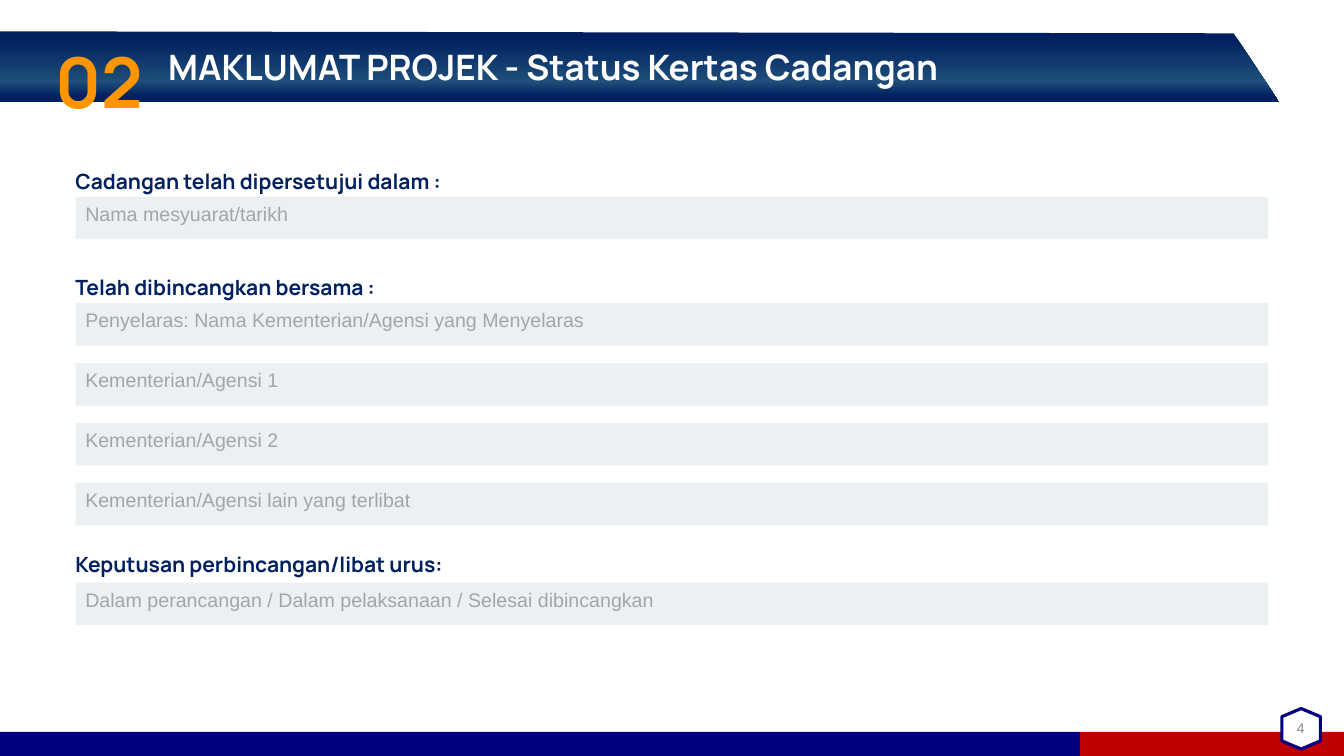
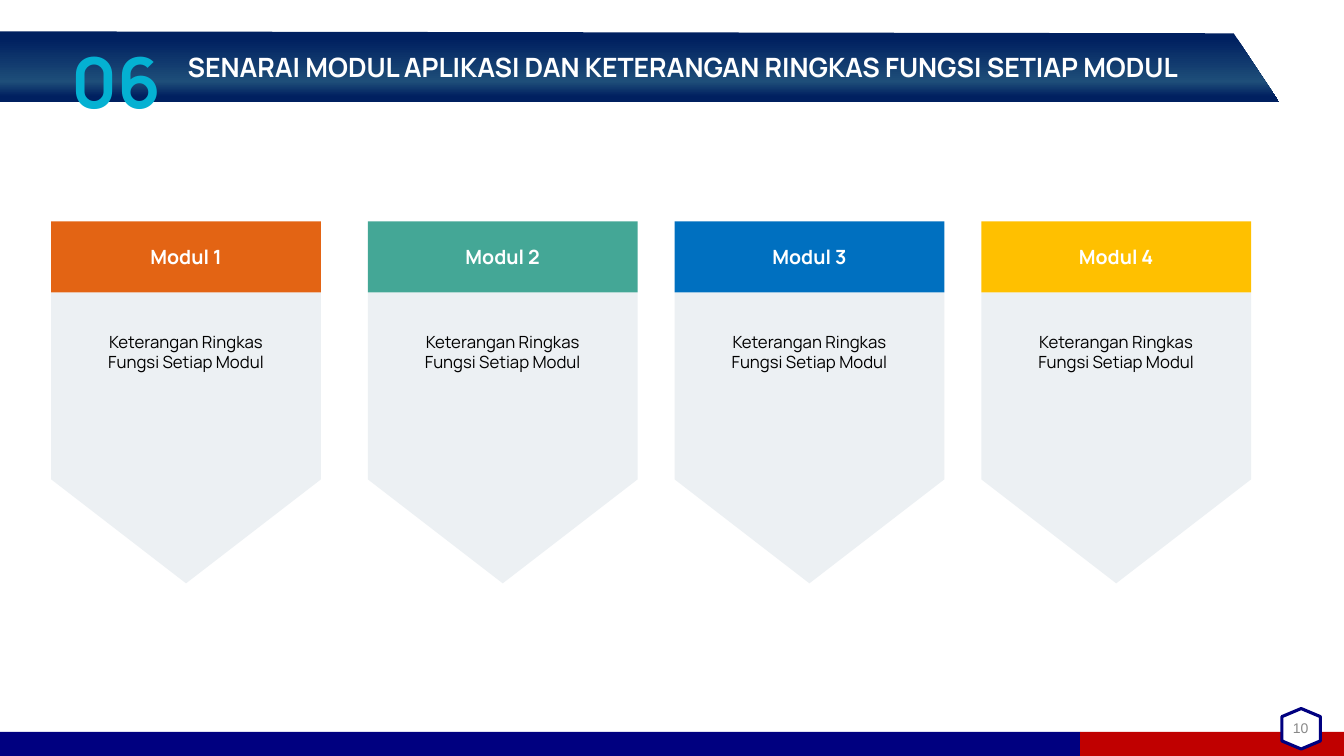
from dataclasses import dataclass
from lxml.etree import SubElement
from pptx import Presentation
from pptx.dml.color import RGBColor
from pptx.enum.shapes import MSO_SHAPE
from pptx.enum.text import MSO_ANCHOR, PP_ALIGN
from pptx.oxml.ns import qn
from pptx.util import Cm, Pt

SLIDE_WIDTH, SLIDE_HEIGHT = 33.87, 19.05
NAVY, BAND_NAVY, BAND_BLUE, RED = "000080", "002060", "1E4E79", "C00000"
WHITE, BLACK, PANEL, PROMPT, PAGE_GREY = "FFFFFF", "000000", "ECF0F3", "A5A5A5", "888888"
BAND_STOPS = [(0, BAND_NAVY), (10, BAND_NAVY), (71, BAND_BLUE), (92, BAND_NAVY), (100, BAND_NAVY)]
HEADING_FONT, BODY_FONT = "Manrope", "Arial"
INSETS, NO_INSETS = (0.25, 0.13), (0, 0)


@dataclass
class Box:
    left: float
    top: float
    width: float
    height: float

    def lengths(self):
        return Cm(self.left), Cm(self.top), Cm(self.width), Cm(self.height)


def color(value):
    return RGBColor.from_string(value)


def write(shape, text, size, text_color, font=HEADING_FONT, bold=False, align=PP_ALIGN.LEFT,
          anchor=MSO_ANCHOR.TOP, insets=INSETS, indent=0, spacing=None):
    frame = shape.text_frame
    frame.word_wrap = True
    frame.vertical_anchor = anchor
    frame.margin_left, frame.margin_right = Cm(insets[0] + indent), Cm(insets[0])
    frame.margin_top = frame.margin_bottom = Cm(insets[1])
    paragraph = frame.paragraphs[0]
    paragraph.text = text
    paragraph.alignment = align
    if spacing:
        paragraph.line_spacing = spacing
    paragraph.font.name = font
    paragraph.font.size = Pt(size)
    paragraph.font.bold = bold
    paragraph.font.color.rgb = color(text_color)


def add_text(slide, box, text, size, text_color, **options):
    write(slide.shapes.add_textbox(*box.lengths()), text, size, text_color, **options)


def paint(shape, fill):
    shape.shadow.inherit = False
    shape.fill.solid()
    shape.fill.fore_color.rgb = color(fill)
    shape.line.fill.background()
    return shape


def add_rectangle(slide, box, fill):
    return paint(slide.shapes.add_shape(MSO_SHAPE.RECTANGLE, *box.lengths()), fill)


def add_outline(slide, points, fill):
    start, *rest = [(Cm(x), Cm(y)) for x, y in points]
    builder = slide.shapes.build_freeform(*start)
    builder.add_line_segments(rest, close=True)
    return paint(builder.convert_to_shape(), fill)


def apply_gradient(shape, stops):
    shape.fill.gradient()
    shape.fill.gradient_angle = 270
    stop_list = shape.element.spPr.find(qn("a:gradFill")).find(qn("a:gsLst"))
    for stop in list(stop_list):
        stop_list.remove(stop)
    for position, value in stops:
        stop = SubElement(stop_list, qn("a:gs"), pos=str(position * 1000))
        SubElement(stop, qn("a:srgbClr"), val=value)


def add_footer(slide, page):
    height, red_left = 0.61, 27.22
    top = SLIDE_HEIGHT - height
    add_rectangle(slide, Box(0, top, red_left, height), NAVY)
    add_rectangle(slide, Box(red_left, top, SLIDE_WIDTH - red_left, height), RED)
    badge = Box(32.28, 17.88, 1.02, 0.97)
    hexagon = paint(slide.shapes.add_shape(MSO_SHAPE.FLOWCHART_PREPARATION, *badge.lengths()), WHITE)
    hexagon.rotation = 90
    hexagon.line.color.rgb = color(NAVY)
    hexagon.line.width = Pt(2.25)
    add_text(slide, Box(badge.left - 0.05, badge.top - 0.05, 1.1, 1.02), page, 10, PAGE_GREY,
             font=BODY_FONT, align=PP_ALIGN.CENTER, anchor=MSO_ANCHOR.MIDDLE)


def add_header(slide, number, number_color, number_left, title, title_size, indent):
    band = add_outline(slide, [(0, 0.79), (31.09, 0.84), (32.23, 2.57), (0, 2.57)], BAND_NAVY)
    apply_gradient(band, BAND_STOPS)
    write(band, title, title_size, WHITE, bold=True, anchor=MSO_ANCHOR.MIDDLE, indent=indent)
    add_text(slide, Box(number_left, -0.1, 2.77, 3.23), number, 50, number_color, bold=True,
             align=PP_ALIGN.RIGHT, insets=NO_INSETS, spacing=1.51)


def add_framed_slide(presentation, page, **header):
    slide = presentation.slides.add_slide(presentation.slide_layouts[6])
    add_footer(slide, page)
    add_header(slide, **header)
    return slide


def add_section(slide, box, label, prompts, fields_offset):
    field_height, pitch = 1.07, 1.51
    add_text(slide, Box(box.left, box.top, 11.02, 0.64), label, 15, BAND_NAVY, bold=True,
             insets=NO_INSETS)
    for index, prompt in enumerate(prompts):
        top = box.top + fields_offset + index * pitch
        field = add_rectangle(slide, Box(box.left, top, box.width, field_height), PANEL)
        write(field, prompt, 14, PROMPT, font=BODY_FONT)


def add_module(slide, box, name, description, fill):
    header_height, point_height, text_width = 1.79, 2.62, 5.33
    right, bottom = box.left + box.width, box.top + box.height
    middle, body_top = box.left + box.width / 2, box.top + header_height
    shoulder = bottom - point_height
    add_outline(slide, [(box.left, body_top), (right, body_top), (right, shoulder),
                        (middle, bottom), (box.left, shoulder)], PANEL)
    header = add_rectangle(slide, Box(box.left, box.top, box.width, header_height), fill)
    write(header, name, 14, WHITE, bold=True, align=PP_ALIGN.CENTER, anchor=MSO_ANCHOR.MIDDLE)
    add_text(slide, Box(middle - text_width / 2, body_top + 0.86, text_width, 1.28),
             description, 12, BLACK, align=PP_ALIGN.CENTER)


def build_status_slide(presentation):
    slide = add_framed_slide(presentation, "4", number="02", number_color="FF9501", number_left=0.84,
                             title="MAKLUMAT PROJEK - Status Kertas Cadangan", title_size=25, indent=3.99)
    sections = [
        (4.24, 0.72, "Cadangan telah dipersetujui dalam :", ["Nama mesyuarat/tarikh"]),
        (6.92, 0.72, "Telah dibincangkan bersama :",
         ["Penyelaras: Nama Kementerian/Agensi yang Menyelaras", "Kementerian/Agensi 1",
          "Kementerian/Agensi 2", "Kementerian/Agensi lain yang terlibat"]),
        (13.89, 0.79, "Keputusan perbincangan/libat urus:",
         ["Dalam perancangan / Dalam pelaksanaan / Selesai dibincangkan"]),
    ]
    for top, fields_offset, label, prompts in sections:
        height = fields_offset + 1.51 * len(prompts)
        add_section(slide, Box(1.9, top, 30.06, height), label, prompts, fields_offset)


def build_modules_slide(presentation):
    slide = add_framed_slide(presentation, "10", number="06", number_color="04B1D2", number_left=1.28,
                             title="SENARAI MODUL APLIKASI DAN KETERANGAN RINGKAS FUNGSI SETIAP MODUL",
                             title_size=19, indent=4.48)
    modules = [(1.29, "E36414"), (9.27, "44A796"), (17, "0070C0"), (24.73, "FFC000")]
    for index, (left, fill) in enumerate(modules, 1):
        add_module(slide, Box(left, 5.58, 6.8, 9.12), f"Modul {index}",
                   "Keterangan Ringkas Fungsi Setiap Modul", fill)


def main():
    presentation = Presentation()
    presentation.slide_width, presentation.slide_height = Cm(SLIDE_WIDTH), Cm(SLIDE_HEIGHT)
    build_status_slide(presentation)
    build_modules_slide(presentation)
    presentation.save("out.pptx")


if __name__ == "__main__":
    main()
